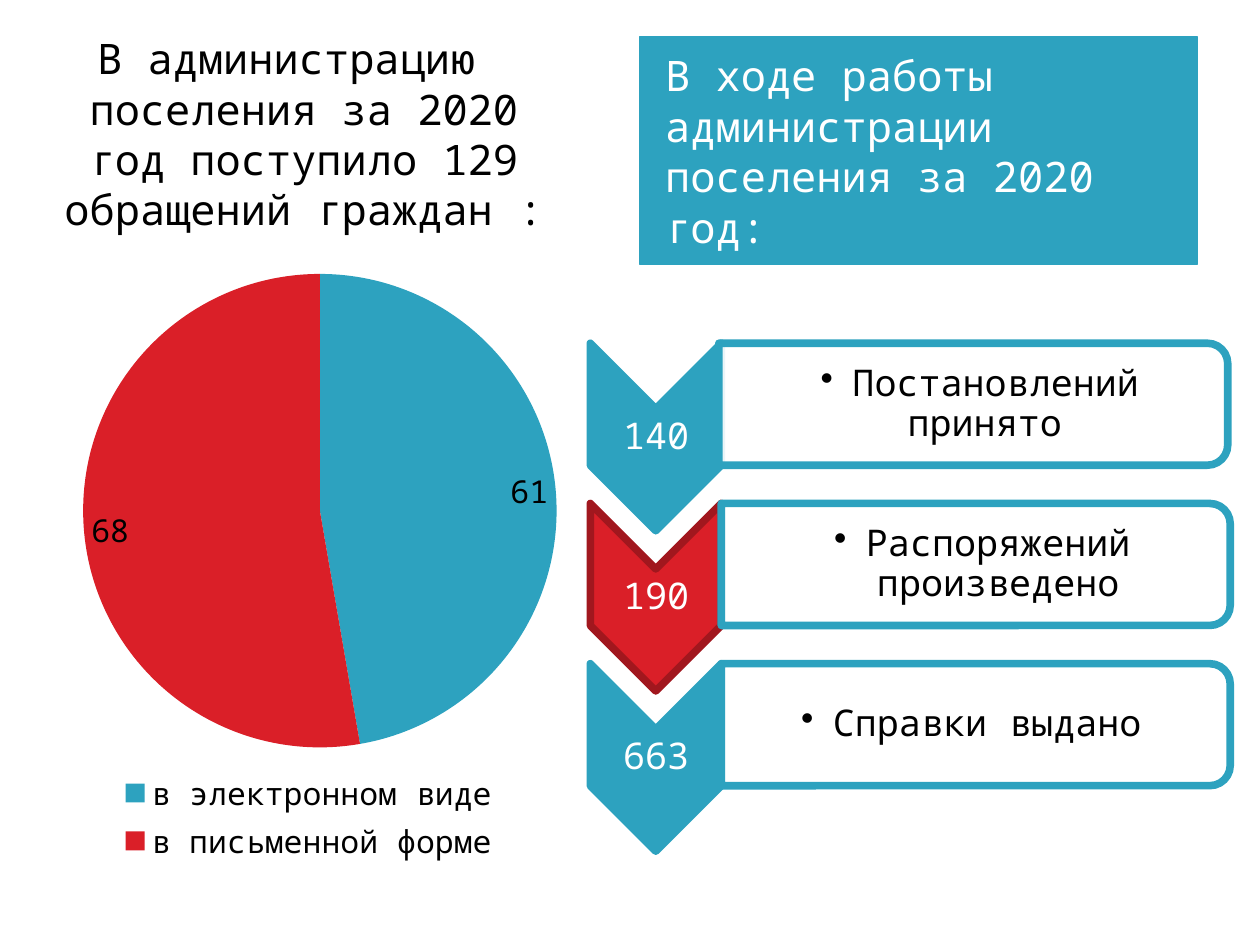
from lxml.etree import SubElement
from pptx import Presentation
from pptx.chart.data import CategoryChartData
from pptx.dml.color import RGBColor
from pptx.enum.chart import XL_CHART_TYPE, XL_LABEL_POSITION, XL_LEGEND_POSITION
from pptx.enum.shapes import MSO_SHAPE as Shape
from pptx.enum.text import MSO_ANCHOR as Anchor, PP_ALIGN as Align
from pptx.oxml import parse_xml
from pptx.oxml.ns import nsdecls, qn
from pptx.util import Cm, Pt

FONT = "Noto Sans Mono"
TEAL = RGBColor(0x2D, 0xA2, 0xBF)
RED = RGBColor(0xDA, 0x1F, 0x28)
DARK_RED = RGBColor(0xA1, 0x17, 0x1E)
WHITE = RGBColor(0xFF, 0xFF, 0xFF)
BLACK = RGBColor(0, 0, 0)

APPEALS_TITLE = "В администрацию поселения за 2020 год поступило 129 обращений граждан :"
WORK_TITLE = "В ходе работы администрации поселения за 2020 год:"
APPEALS = [("в электронном виде", 61, TEAL), ("в письменной форме", 68, RED)]
# count, document, fill, outline, horizontal shift of the bar in cm
DOCUMENTS = [
    ("140", "Постановлений принято ", TEAL, TEAL, -0.05),
    ("190", "Распоряжений произведено", RED, DARK_RED, 0),
    ("663", "Справки выдано ", TEAL, TEAL, 0),
]
FIRST_TOP, PITCH = 7.49, 3.23


def box(left, top, width, height):
    return [Cm(length) for length in (left, top, width, height)]


def add_shape(kind, place, fill, outline, weight):
    shape = slide.shapes.add_shape(kind, *box(*place))
    shape.shadow.inherit = False
    shape.fill.solid()
    shape.fill.fore_color.rgb = fill
    shape.line.color.rgb = outline
    shape.line.width = Pt(weight)
    return shape


def write(shape, text, size, color, align, anchor, insets):
    """Fill the shape with one paragraph; insets in cm: left, top, right, bottom."""
    frame = shape.text_frame
    frame.word_wrap = True
    frame.vertical_anchor = anchor
    (frame.margin_left, frame.margin_top,
     frame.margin_right, frame.margin_bottom) = box(*insets)
    frame.text = text
    paragraph = frame.paragraphs[0]
    paragraph.alignment = align
    font = paragraph.runs[0].font
    font.name, font.size, font.color.rgb = FONT, Pt(size), color
    return paragraph


def indent(paragraph, left, first_line):
    properties = paragraph._p.get_or_add_pPr()
    properties.set("marL", str(Cm(left)))
    properties.set("indent", str(Cm(first_line)))
    return properties


def set_layout(parent, index, x, y, w, h, target=""):
    """Place a chart part by fractions of the chart area."""
    for old in parent.findall(qn("c:layout")):
        parent.remove(old)
    parent.insert(index, parse_xml(
        f'<c:layout {nsdecls("c")}><c:manualLayout>{target}'
        '<c:xMode val="edge"/><c:yMode val="edge"/>'
        f'<c:x val="{x}"/><c:y val="{y}"/><c:w val="{w}"/><c:h val="{h}"/>'
        '</c:manualLayout></c:layout>'))


def add_appeals_chart():
    data = CategoryChartData()
    data.categories = [name for name, _, _ in APPEALS]
    data.add_series("Series 1", [value for _, value, _ in APPEALS])
    chart = slide.shapes.add_chart(
        XL_CHART_TYPE.PIE, *box(0.89, 5.13, 11.23, 12.6), data).chart
    chart.has_title = False
    chart.font.name, chart.font.size, chart.font.color.rgb = FONT, Pt(18), BLACK
    chart.has_legend = True
    chart.legend.position = XL_LEGEND_POSITION.BOTTOM
    chart.legend.include_in_layout = False
    plot = chart.plots[0]
    plot.vary_by_categories = True
    plot.has_data_labels = True
    plot.data_labels.show_value = True
    plot.data_labels.show_percentage = False
    plot.data_labels.position = XL_LABEL_POSITION.INSIDE_END
    for index, (_, _, color) in enumerate(APPEALS):
        fill = plot.series[0].points[index].format.fill
        fill.solid()
        fill.fore_color.rgb = color
    set_layout(chart._chartSpace.chart.plotArea, 0, 0.07, 0.03, 0.85, 0.76,
               '<c:layoutTarget val="inner"/>')
    set_layout(chart.legend._element, 1, 0.1, 0.82, 0.75, 0.16)


def add_document_row(top, count, document, fill, outline, shift):
    chevron = add_shape(Shape.CHEVRON, (11.33, top, 3.78, 2.64), fill, outline, 4.33)
    chevron.rotation = 90
    thin = (0.03, 0.03, 0.03, 0.03)
    number = slide.shapes.add_textbox(*box(11.91, top + 0.76, 2.64, 1.14))
    write(number, count, 21, WHITE, Align.CENTER, Anchor.MIDDLE, thin).line_spacing = 0.9

    bar = add_shape(Shape.ROUND_2_SAME_RECTANGLE,
                    (18.44 + shift, top - 4.47, 2.46, 10.26), WHITE, TEAL, 4.33)
    bar.rotation = 90
    white = bar.fill._xPr.find(qn("a:solidFill"))[0]
    SubElement(white, qn("a:alpha"), val="90000")
    label = slide.shapes.add_textbox(*box(14.55 + shift, top - 0.44, 10.13, 2.21))
    paragraph = write(label, document, 21, BLACK, Align.CENTER, Anchor.MIDDLE,
                      (0.41, 0.03, 0.03, 0.03))
    paragraph.line_spacing = 0.9
    SubElement(indent(paragraph, 0.64, -0.64), qn("a:buChar"), char="•")


presentation = Presentation()
presentation.slide_width, presentation.slide_height = Cm(25.4), Cm(19.05)
slide = presentation.slides.add_slide(presentation.slide_layouts[6])

banner = add_shape(Shape.RECTANGLE, (12.9, 0.74, 11.23, 4.6), TEAL, TEAL, 0.75)
write(banner, WORK_TITLE, 24, WHITE, Align.LEFT, Anchor.MIDDLE, (0.51, 0.13, 0.25, 0.13))
heading = slide.shapes.add_textbox(*box(0, 0.53, 11.23, 10.95))
indent(write(heading, APPEALS_TITLE, 24, BLACK, Align.CENTER, Anchor.TOP,
             (0.25, 0.13, 0.25, 0.13)), 1.02, -0.71)
add_appeals_chart()
for row, document_row in enumerate(DOCUMENTS):
    add_document_row(FIRST_TOP + row * PITCH, *document_row)

presentation.save("out.pptx")
